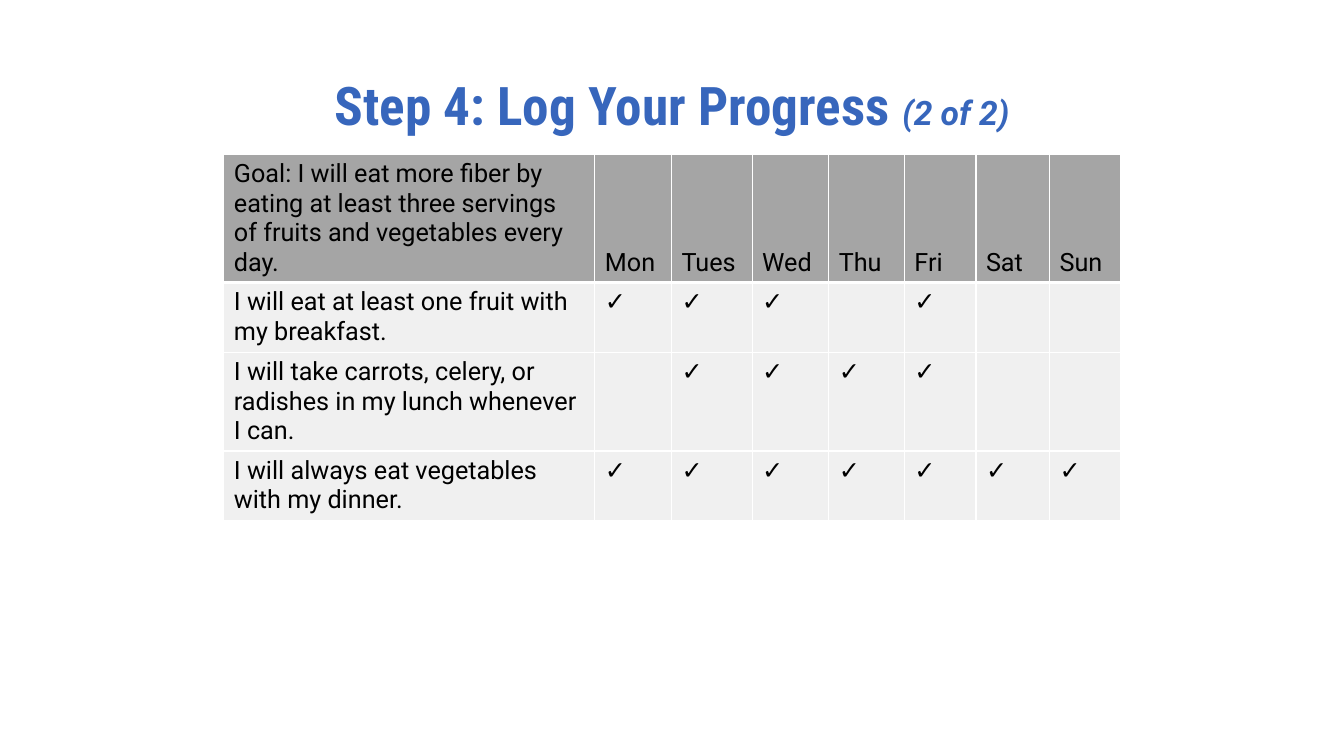
from lxml import etree
from pptx import Presentation
from pptx.dml.color import RGBColor
from pptx.enum.text import MSO_ANCHOR, PP_ALIGN
from pptx.oxml.ns import qn
from pptx.util import Inches, Pt

CENTER = PP_ALIGN.CENTER
TOP, MIDDLE, BOTTOM = MSO_ANCHOR.TOP, MSO_ANCHOR.MIDDLE, MSO_ANCHOR.BOTTOM
BLUE, BLACK, WHITE = "3766BC", "000000", "FFFFFF"
GRAY, PALE = "A5A5A5", "F0F0F0"


def color(code):
    return RGBColor.from_string(code)


def add_run(para, text, code, form):
    run = para.add_run()
    run.text = text
    run.font.color.rgb = color(code)
    for name, value in form.items():
        setattr(run.font, name, value)


deck = Presentation()
deck.slide_width, deck.slide_height = Inches(13.33), Inches(7.5)
slide = deck.slides.add_slide(deck.slide_layouts[6])

# Goal log: the days that are ticked for each habit
days = ["Mon", "Tues", "Wed", "Thu", "Fri", "Sat", "Sun"]
goal = ("Goal: I will eat more fiber by eating at least three servings "
        "of fruits and vegetables every day.")
habits = [
    ("I will eat at least one fruit with my breakfast.",
     ["Mon", "Tues", "Wed", "Fri"]),
    ("I will take carrots, celery, or radishes in my lunch whenever I can.",
     ["Tues", "Wed", "Thu", "Fri"]),
    ("I will always eat vegetables with my dinner.", days),
]
rows = [[goal] + days]
for habit, done in habits:
    rows.append([habit] + ["✓" if day in done else "" for day in days])

widths = [3.68, 0.76, 0.8, 0.76, 0.75, 0.71, 0.73, 0.7]
heights = [1.27, 0.69, 0.98, 0.69]
frame = slide.shapes.add_table(
    len(rows), len(widths), Inches(2.22), Inches(1.53),
    Inches(sum(widths)), Inches(sum(heights)))
table = frame.table
for col, width in zip(table.columns, widths):
    col.width = Inches(width)
for row, height in zip(table.rows, heights):
    row.height = Inches(height)

body = {"name": "Roboto", "size": Pt(18), "bold": False}
for r, texts in enumerate(rows):
    head = r == 0
    for c, text in enumerate(texts):
        cell = table.cell(r, c)
        cell.vertical_anchor = BOTTOM if head else TOP
        add_run(cell.text_frame.paragraphs[0], text, BLACK, body)

        # White cell borders, which go before the fill
        props = cell._tc.get_or_add_tcPr()
        for side in ("lnL", "lnR", "lnT", "lnB"):
            points = 3 if head and side == "lnB" else 1
            line = etree.SubElement(props, qn("a:" + side), w=str(Pt(points)))
            paint = etree.SubElement(line, qn("a:solidFill"))
            etree.SubElement(paint, qn("a:srgbClr"), val=WHITE)
        cell.fill.solid()
        cell.fill.fore_color.rgb = color(GRAY if head else PALE)

# Title
box = slide.shapes.add_textbox(
    Inches(0), Inches(0.61), Inches(13.33), Inches(0.93))
layout = {"word_wrap": True, "vertical_anchor": MIDDLE, "margin_left": 0,
          "margin_right": 0, "margin_top": 0, "margin_bottom": 0}
for name, value in layout.items():
    setattr(box.text_frame, name, value)
title = box.text_frame.paragraphs[0]
title.alignment, title.line_spacing = CENTER, 0.9
add_run(title, "Step 4: Log Your Progress ", BLUE,
        {"name": "Roboto Condensed", "size": Pt(38), "bold": True})
add_run(title, "(2 of 2)", BLUE,
        {"name": "Roboto", "size": Pt(24), "bold": True, "italic": True})

deck.save("out.pptx")
